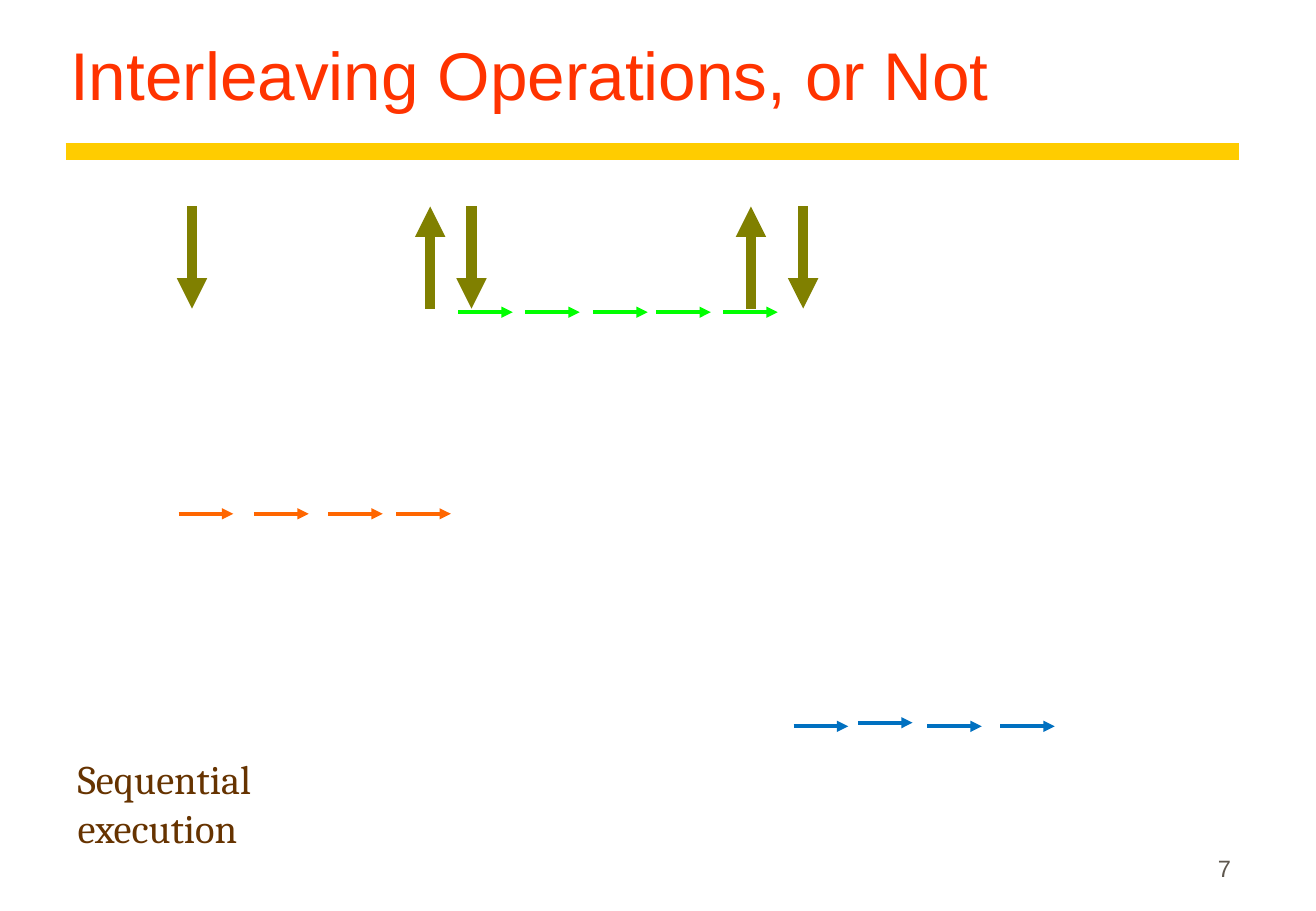
from dataclasses import dataclass

from lxml.etree import SubElement
from pptx import Presentation
from pptx.dml.color import RGBColor
from pptx.enum.shapes import MSO_CONNECTOR
from pptx.enum.text import MSO_ANCHOR, PP_ALIGN
from pptx.oxml.ns import qn
from pptx.util import Inches, Pt

GOLD = RGBColor(0xFF, 0xCC, 0x00)
RED = RGBColor(0xFF, 0x33, 0x00)
GREEN = RGBColor(0x00, 0xFF, 0x00)
BLUE = RGBColor(0x00, 0x70, 0xC0)
ORANGE = RGBColor(0xFF, 0x66, 0x00)
OLIVE = RGBColor(0x80, 0x80, 0x00)
BROWN = RGBColor(0x66, 0x33, 0x00)
GREY = RGBColor(0x5E, 0x57, 0x4E)

WIDTH, HEIGHT = Inches(10.83), Inches(7.5)
STEP_LENGTH = 4.16
CALL_TOP, CALL_BOTTOM = 22.67, 33.87


def column(share: float) -> int:
    """Horizontal length, in hundredths of the slide's width."""
    return round(WIDTH * share / 100)


def row(share: float) -> int:
    """Vertical length, in hundredths of the slide's height."""
    return round(HEIGHT * share / 100)


@dataclass(frozen=True)
class Label:
    text: str
    left: float
    top: float
    width: float
    height: float
    font: str
    size: float
    color: RGBColor
    anchor: MSO_ANCHOR = MSO_ANCHOR.TOP
    align: PP_ALIGN = PP_ALIGN.LEFT
    spacing: float = 1.0
    wrap: bool = True


@dataclass(frozen=True)
class Step:
    left: float
    level: float


@dataclass(frozen=True)
class Operation:
    color: RGBColor
    steps: tuple[Step, ...]


@dataclass(frozen=True)
class Call:
    """A thick vertical arrow: down into an operation, up when it returns."""
    center: float
    down: bool


LABELS = (
    Label("7", 83.38, 93.33, 11.08, 4.13, "Arial", 14, GREY,
          anchor=MSO_ANCHOR.BOTTOM, align=PP_ALIGN.RIGHT),
    Label("Interleaving Operations, or Not", 4.43, 3.33, 89.75, 10.67,
          "Arial", 40, RED, anchor=MSO_ANCHOR.MIDDLE, spacing=0.9),
    Label("Sequential execution", 4.99, 82.13, 27.79, 6.67,
          "Cambria", 24, BROWN, wrap=False),
)

OPERATIONS = (
    Operation(GREEN, tuple(Step(left, 34.27) for left in
                           (34.81, 39.89, 45.06, 49.86, 54.94))),
    Operation(BLUE, (Step(60.3, 79.73), Step(65.19, 79.33),
                     Step(70.45, 79.73), Step(75.99, 79.73))),
    Operation(ORANGE, tuple(Step(left, 56.4) for left in
                            (13.57, 19.3, 24.93, 30.1))),
)

CALLS = (Call(14.59, True), Call(32.69, False), Call(35.83, True),
         Call(57.06, False), Call(61.03, True))


def draw_line(shapes, start: tuple[float, float], end: tuple[float, float],
              color: RGBColor, weight: float, arrow: bool = True) -> None:
    line = shapes.add_connector(MSO_CONNECTOR.STRAIGHT,
                                column(start[0]), row(start[1]),
                                column(end[0]), row(end[1]))
    line.line.color.rgb = color
    line.line.width = Pt(weight)
    if arrow:
        SubElement(line.line._get_or_add_ln(), qn("a:tailEnd"), type="triangle")
    SubElement(line._element.spPr, qn("a:effectLst"))


def draw_label(shapes, label: Label) -> None:
    box = shapes.add_textbox(column(label.left), row(label.top),
                             column(label.width), row(label.height))
    frame = box.text_frame
    frame.word_wrap = label.wrap
    frame.vertical_anchor = label.anchor
    frame.text = label.text
    para = frame.paragraphs[0]
    para.alignment = label.align
    para.line_spacing = label.spacing
    span = para.runs[0]
    span.font.name = label.font
    span.font.size = Pt(label.size)
    span.font.color.rgb = label.color


def draw_operation(shapes, operation: Operation) -> None:
    group = shapes.add_group_shape()
    for step in operation.steps:
        draw_line(group.shapes, (step.left, step.level),
                  (step.left + STEP_LENGTH, step.level), operation.color, 2.25)


def draw_call(shapes, call: Call) -> None:
    top, bottom = (call.center, CALL_TOP), (call.center, CALL_BOTTOM)
    start, end = (top, bottom) if call.down else (bottom, top)
    draw_line(shapes, start, end, OLIVE, 6)


def main() -> None:
    deck = Presentation()
    deck.slide_width, deck.slide_height = WIDTH, HEIGHT
    page = deck.slides.add_slide(deck.slide_layouts[6])
    draw_line(page.shapes, (4.99, 16.67), (94.18, 16.67), GOLD, 10, arrow=False)
    for label in LABELS:
        draw_label(page.shapes, label)
    for operation in OPERATIONS:
        draw_operation(page.shapes, operation)
    for call in CALLS:
        draw_call(page.shapes, call)
    deck.save("out.pptx")


if __name__ == "__main__":
    main()
